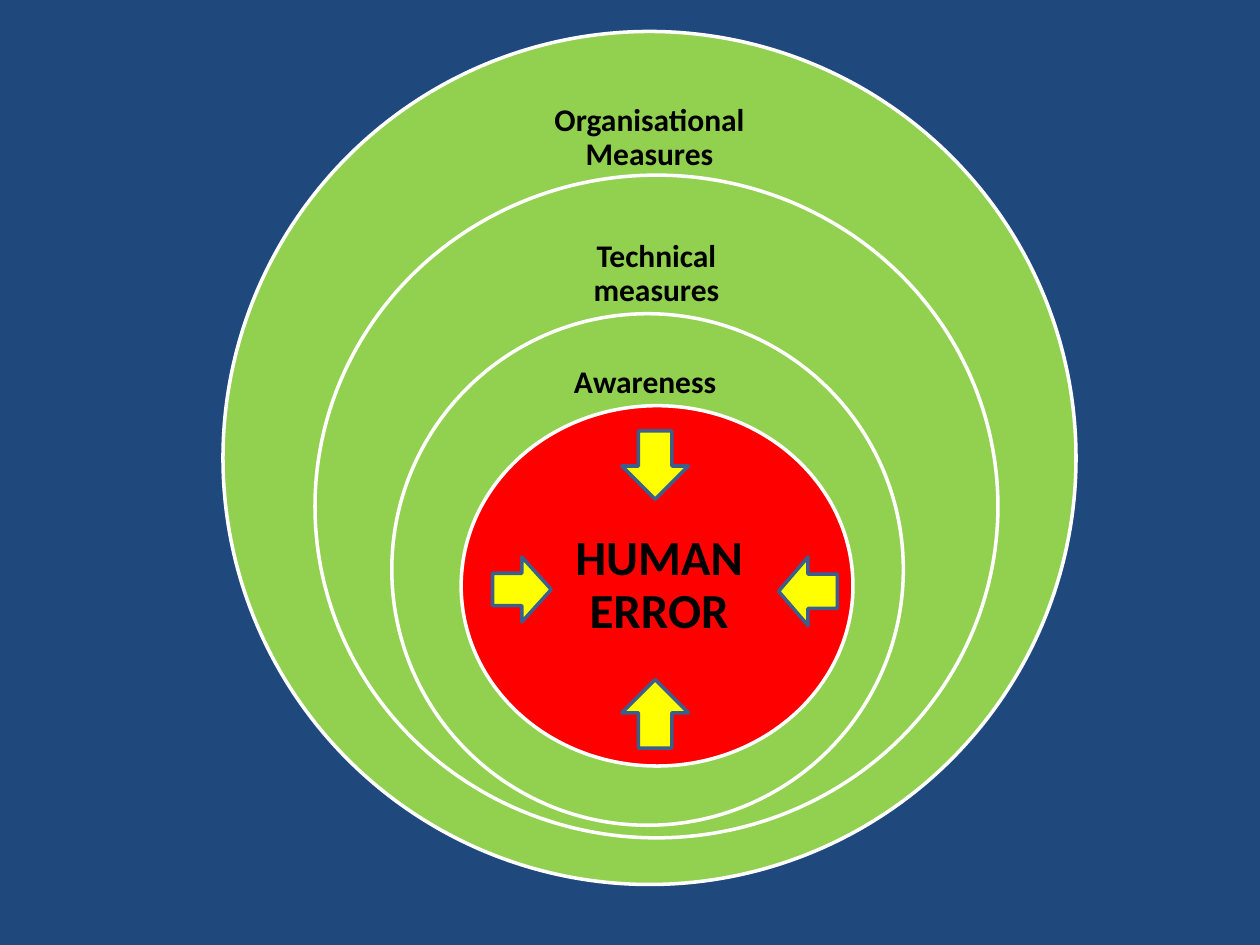
from dataclasses import dataclass
from typing import NamedTuple

from pptx import Presentation
from pptx.dml.color import RGBColor as RGB
from pptx.enum.shapes import MSO_SHAPE as SHAPE
from pptx.enum.text import MSO_ANCHOR as ANCHOR, PP_ALIGN as ALIGN
from pptx.util import Inches, Pt


@dataclass(frozen=True)
class Theme:
    background: str = "1F497D"
    ring: str = "92D050"
    core: str = "FF0000"
    ring_line: str = "FFFFFF"
    arrow: str = "FFFF00"
    arrow_line: str = "3A5F8C"
    text: str = "000000"
    font: str = "Calibri"
    label_size: int = 18
    core_size: int = 28
    line_width: int = 2
    label_inset: float = 0.14
    core_inset: float = 0.22


class Box(NamedTuple):
    left: float
    top: float
    width: float
    height: float


THEME = Theme()
COLUMNS, ROWS = 100, 75
SLIDE = Box(0, 0, 10, 7.5)

RINGS = [
    ("Organisational Measures", (17.7, 2.5, 67.7, 67.7),
     (0.36, 0.05, 0.28, 0.15), ANCHOR.MIDDLE),
    ("Technical measures", (25, 13.9, 54.2, 52.6),
     (0.32, 0.06, 0.36, 0.18), ANCHOR.MIDDLE),
    ("Awareness", (31.1, 24.9, 40.6, 40.6),
     (0.26, 0.07, 0.47, 0.22), ANCHOR.TOP),
]
CORE = (36.6, 32.2, 31.1, 28.6)
ARROWS = [
    (SHAPE.DOWN_ARROW, (0.41, 0.07, 0.17, 0.19)),
    (SHAPE.RIGHT_ARROW, (0.08, 0.42, 0.15, 0.18)),
    (SHAPE.LEFT_ARROW, (0.81, 0.42, 0.15, 0.19)),
    (SHAPE.UP_ARROW, (0.41, 0.76, 0.17, 0.19)),
]


def inner_box(box, x, y, w, h):
    return Box(box.left + x * box.width, box.top + y * box.height,
               w * box.width, h * box.height)


def grid_box(column, row, columns, rows):
    return inner_box(SLIDE, column / COLUMNS, row / ROWS,
                     columns / COLUMNS, rows / ROWS)


def add_outline(slide, kind, box, fill, line):
    s = slide.shapes.add_shape(kind, *map(Inches, box))
    s.shadow.inherit = False
    s.fill.solid()
    s.fill.fore_color.rgb = RGB.from_string(fill)
    s.line.color.rgb = RGB.from_string(line)
    s.line.width = Pt(THEME.line_width)


def add_label(slide, box, text, size, inset, anchor=ANCHOR.MIDDLE):
    tf = slide.shapes.add_textbox(*map(Inches, box)).text_frame
    tf.word_wrap = True
    tf.vertical_anchor = anchor
    tf.margin_left = tf.margin_right = Inches(inset)
    tf.margin_top = tf.margin_bottom = Inches(inset)
    tf.text = text
    p = tf.paragraphs[0]
    p.alignment = ALIGN.CENTER
    p.line_spacing = 0.9
    font = p.runs[0].font
    font.name = THEME.font
    font.size = Pt(size)
    font.bold = True
    font.color.rgb = RGB.from_string(THEME.text)


def add_ring(slide, box, text, label_share, anchor):
    add_outline(slide, SHAPE.OVAL, box, THEME.ring, THEME.ring_line)
    add_label(slide, inner_box(box, *label_share), text,
              THEME.label_size, THEME.label_inset, anchor)


def add_core(slide, box):
    add_outline(slide, SHAPE.OVAL, box, THEME.core, THEME.ring_line)
    add_label(slide, inner_box(box, 0.15, 0.25, 0.71, 0.5), "HUMAN ERROR",
              THEME.core_size, THEME.core_inset)
    for kind, share in ARROWS:
        add_outline(slide, kind, inner_box(box, *share),
                    THEME.arrow, THEME.arrow_line)


def main():
    prs = Presentation()
    prs.slide_width, prs.slide_height = Inches(SLIDE.width), Inches(SLIDE.height)
    slide = prs.slides.add_slide(prs.slide_layouts[6])
    slide.background.fill.solid()
    slide.background.fill.fore_color.rgb = RGB.from_string(THEME.background)
    for text, cells, label_share, anchor in RINGS:
        add_ring(slide, grid_box(*cells), text, label_share, anchor)
    add_core(slide, grid_box(*CORE))
    prs.save("out.pptx")


if __name__ == "__main__":
    main()
